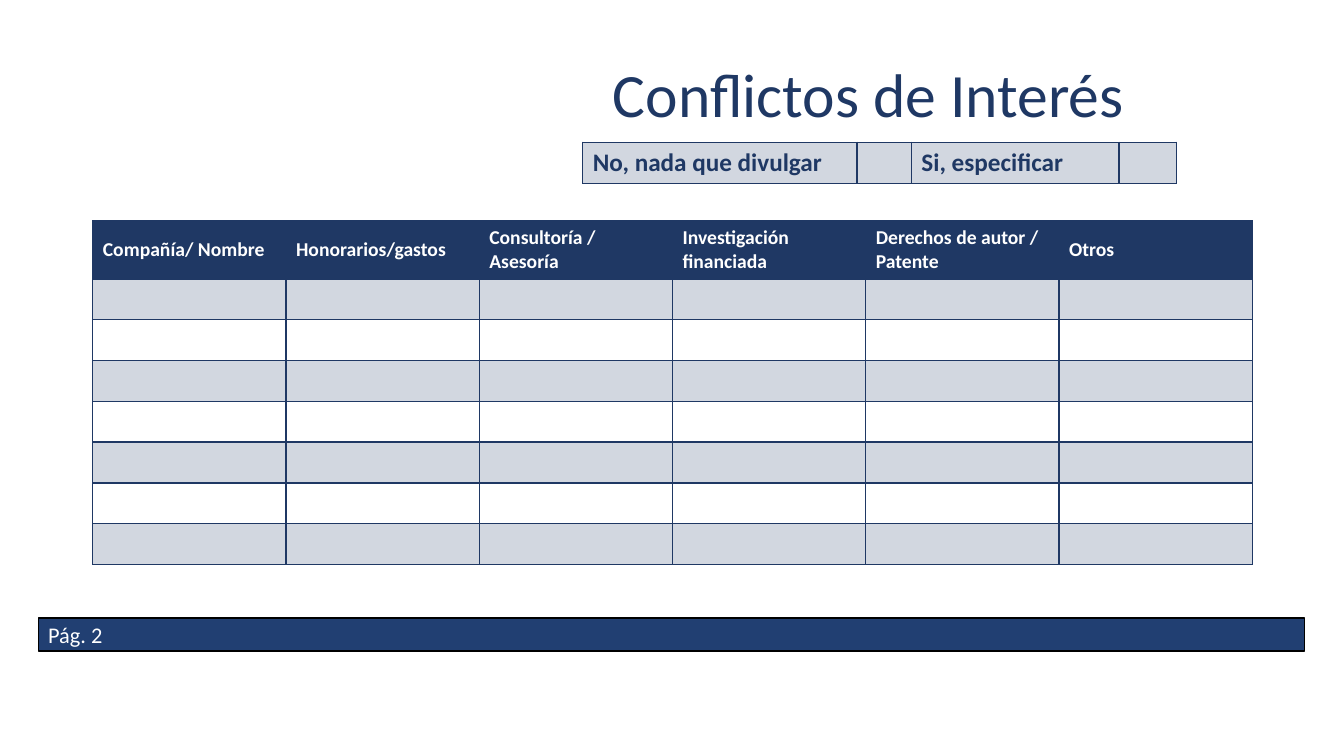
from lxml.etree import SubElement
from pptx import Presentation
from pptx.dml.color import RGBColor
from pptx.enum.shapes import MSO_SHAPE as SHAPE
from pptx.enum.text import MSO_ANCHOR as ANCHOR, PP_ALIGN as ALIGN
from pptx.oxml.ns import qn
from pptx.util import Inches, Pt

NAVY, BAR, PALE, WHITE, BLACK = "1F3864", "213F72", "D2D7E0", "FFFFFF", "000000"
TITLE = "Conflictos de Interés"
PAGE = "Pág. 2"
ANSWERS = ["No, nada que divulgar", "", "Si, especificar", ""]
HEADERS = ["Compañía/ Nombre", "Honorarios/gastos", "Consultoría / Asesoría",
           "Investigación financiada", "Derechos de autor / Patente", "Otros"]
EMPTY_ROWS = 7

TITLE_FONT = dict(size=Pt(44), color=NAVY)
HEADER_FONT = dict(size=Pt(14), bold=True, color=WHITE)
ANSWER_FONT = dict(size=Pt(18), bold=True, color=NAVY)
PAGE_FONT = dict(size=Pt(16), color=WHITE)


def rgb(value):
    return RGBColor.from_string(value)


def write(tf, text, fmt, align=ALIGN.LEFT):
    tf.word_wrap = True
    tf.vertical_anchor = ANCHOR.MIDDLE
    p = tf.paragraphs[0]
    p.alignment = align
    r = p.add_run()
    r.text = text
    r.font.name = "Calibri"
    for name, value in fmt.items():
        if name == "color":
            r.font.color.rgb = rgb(value)
        else:
            setattr(r.font, name, value)
    return p


def border(cell, bottom):
    tcPr = cell._tc.get_or_add_tcPr()
    for side, width in dict(L=1, R=1, T=1, B=bottom).items():
        ln = SubElement(tcPr, qn(f"a:ln{side}"), w=str(Pt(width)))
        fill = SubElement(ln, qn("a:solidFill"))
        SubElement(fill, qn("a:srgbClr"), val=NAVY)


def add_grid(s, left, top, widths, heights, rows, fills, fmt, bottoms):
    frame = s.shapes.add_table(len(heights), len(widths), Inches(left), Inches(top),
                               Inches(sum(widths)), Inches(sum(heights)))
    table = frame.table
    for col, width in zip(table.columns, widths):
        col.width = Inches(width)
    for i, height in enumerate(heights):
        table.rows[i].height = Inches(height)
        for j, text in enumerate(rows[i]):
            cell = table.cell(i, j)
            border(cell, bottoms[i])
            if fills[i]:
                cell.fill.solid()
                cell.fill.fore_color.rgb = rgb(fills[i])
            else:
                cell.fill.background()
            cell.vertical_anchor = ANCHOR.MIDDLE
            if text:
                write(cell.text_frame, text, fmt)


prs = Presentation()
prs.slide_width, prs.slide_height = Inches(13.33), Inches(7.5)
s = prs.slides.add_slide(prs.slide_layouts[5])

title = s.shapes.title
title.left, title.top, title.width, title.height = map(Inches, (4.29, 0.47, 8.65, 0.99))
write(title.text_frame, TITLE, TITLE_FONT, ALIGN.CENTER).line_spacing = 0.9

add_grid(s, 0.92, 2.19, [11.5 / len(HEADERS)] * len(HEADERS), [0.57] + [2.84 / EMPTY_ROWS] * EMPTY_ROWS,
         [HEADERS] + [[""] * len(HEADERS)] * EMPTY_ROWS,
         [NAVY] + [None if i % 2 else PALE for i in range(EMPTY_ROWS)],
         HEADER_FONT, [2] + [1] * EMPTY_ROWS)

bar = s.shapes.add_shape(SHAPE.FLOWCHART_PROCESS, *map(Inches, (0.38, 6.13, 12.56, 0.33)))
bar.shadow.inherit = False
bar.fill.solid()
bar.fill.fore_color.rgb = rgb(BAR)
bar.line.color.rgb = rgb(BLACK)
bar.line.width = Pt(1)
write(bar.text_frame, PAGE, PAGE_FONT)

add_grid(s, 5.78, 1.41, [2.72, 0.54, 2.06, 0.57], [0.41], [ANSWERS], [PALE], ANSWER_FONT, [1])

prs.save("out.pptx")
